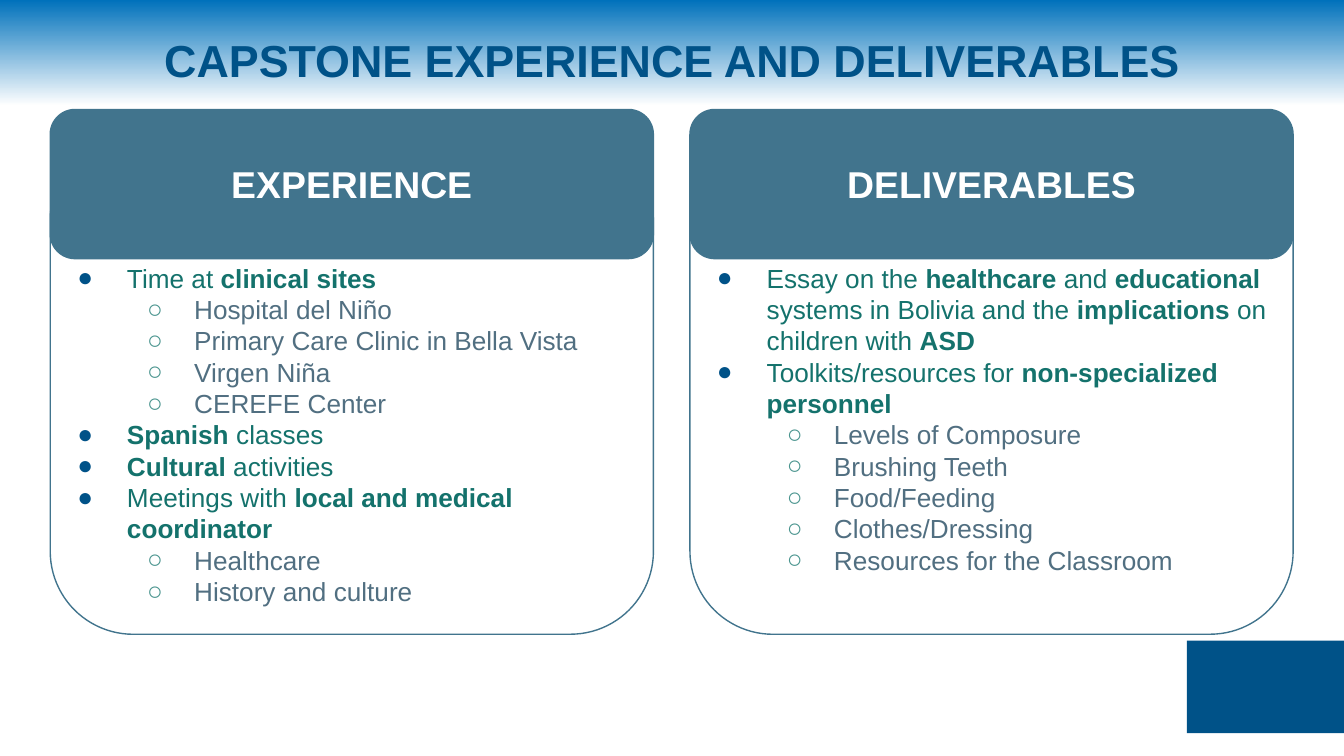
from lxml.etree import SubElement
from pptx import Presentation
from pptx.dml.color import RGBColor
from pptx.enum.shapes import MSO_SHAPE
from pptx.enum.text import MSO_ANCHOR, MSO_AUTO_SIZE, PP_ALIGN
from pptx.oxml.ns import qn
from pptx.util import Cm, Pt

FONT = "Arial"
NAVY, STEEL, WHITE = "005288", "41748D", "FFFFFF"

# Per list level: left margin, hanging indent (cm), bullet, bullet colour, text colour
LEVELS = [
    (1.27, -0.94, "●", NAVY, "14726C"),
    (2.54, -0.89, "○", "49948E", "516F81"),
]

# List items are (level, text); ** switches bold on and off
EXPERIENCE = [
    (0, "Time at **clinical sites**"),
    (1, "Hospital del Niño"),
    (1, "Primary Care Clinic in Bella Vista"),
    (1, "Virgen Niña"),
    (1, "CEREFE Center"),
    (0, "**Spanish** classes"),
    (0, "**Cultural** activities"),
    (0, "Meetings with **local and medical coordinator**"),
    (1, "Healthcare"),
    (1, "History and culture"),
]
DELIVERABLES = [
    (0, "Essay on the **healthcare **and** educational **systems in Bolivia "
        "and the **implications** on children with **ASD**"),
    (0, "Toolkits/resources for **non-specialized personnel**"),
    (1, "Levels of Composure"),
    (1, "Brushing Teeth"),
    (1, "Food/Feeding"),
    (1, "Clothes/Dressing"),
    (1, "Resources for the Classroom"),
]


def color(hex_string):
    return RGBColor.from_string(hex_string)


def place(shape, box):
    shape.left, shape.top, shape.width, shape.height = (Cm(value) for value in box)


def set_frame(text_frame, anchor, side, edge):
    text_frame.word_wrap = True
    text_frame.auto_size = MSO_AUTO_SIZE.NONE
    text_frame.vertical_anchor = anchor
    text_frame.margin_left = text_frame.margin_right = Cm(side)
    text_frame.margin_top = text_frame.margin_bottom = Cm(edge)


def style_run(run, size, hex_string, bold):
    run.font.name = FONT
    run.font.size = Pt(size)
    run.font.bold = bold
    run.font.color.rgb = color(hex_string)


def set_heading(text_frame, text, size, hex_string):
    text_frame.text = text
    paragraph = text_frame.paragraphs[0]
    paragraph.alignment = PP_ALIGN.CENTER
    style_run(paragraph.runs[0], size, hex_string, True)


def add_box(slide, kind, box, fill=None, line=None):
    shape = slide.shapes.add_shape(kind, *(Cm(value) for value in box))
    shape.shadow.inherit = False
    if fill:
        shape.fill.solid()
        shape.fill.fore_color.rgb = color(fill)
    else:
        shape.fill.background()
    if line:
        shape.line.color.rgb = color(line)
        shape.line.width = Pt(0.75)
    else:
        shape.line.fill.background()
    return shape


def set_bullet(paragraph, level):
    margin, indent, character, bullet_color, _ = LEVELS[level]
    properties = paragraph._p.get_or_add_pPr()
    properties.set("marL", str(Cm(margin)))
    properties.set("indent", str(Cm(indent)))
    bullet_fill = SubElement(properties, qn("a:buClr"))
    SubElement(bullet_fill, qn("a:srgbClr"), val=bullet_color)
    SubElement(properties, qn("a:buFont"), typeface=FONT)
    SubElement(properties, qn("a:buChar"), char=character)


def fill_list(placeholder, box, items):
    place(placeholder, box)
    text_frame = placeholder.text_frame
    set_frame(text_frame, MSO_ANCHOR.TOP, 0.18, 0.1)
    for index, (level, text) in enumerate(items):
        paragraph = text_frame.add_paragraph() if index else text_frame.paragraphs[0]
        paragraph.level = level
        set_bullet(paragraph, level)
        paragraph.alignment = PP_ALIGN.LEFT
        paragraph.line_spacing = 1.0
        paragraph.space_before = paragraph.space_after = Pt(0)
        for part, words in enumerate(text.split("**")):
            if words:
                run = paragraph.add_run()
                run.text = words
                style_run(run, 14, LEVELS[level][4], part % 2 == 1)


def set_background(slide):
    fill = slide.background.fill
    fill.gradient()
    fill.gradient_angle = 270
    for stop, (position, hex_string) in zip(
        fill.gradient_stops, [(0, "0071BB"), (0.14, WHITE)]
    ):
        stop.position = position
        stop.color.rgb = color(hex_string)


def fill_title(placeholder, box):
    place(placeholder, box)
    set_frame(placeholder.text_frame, MSO_ANCHOR.MIDDLE, 0.18, 0.1)
    set_heading(placeholder.text_frame, "CAPSTONE EXPERIENCE AND DELIVERABLES", 24, NAVY)


def add_card(slide, box, heading, placeholder, list_size, items):
    left, top, width, height = box
    header_height = 2.82
    # Outline, starting behind the header
    add_box(slide, MSO_SHAPE.ROUNDED_RECTANGLE,
            (left, top + 0.51, width, height - 0.51), line=STEEL)
    # Header
    header = add_box(slide, MSO_SHAPE.ROUNDED_RECTANGLE,
                     (left, top, width, header_height), STEEL, STEEL)
    set_frame(header.text_frame, MSO_ANCHOR.MIDDLE, 0.25, 0.25)
    set_heading(header.text_frame, heading, 20, WHITE)
    # List
    fill_list(placeholder, (left, top + header_height - 0.04, *list_size), items)


def main():
    presentation = Presentation()
    presentation.slide_width, presentation.slide_height = Cm(25.4), Cm(14.29)
    slide = presentation.slides.add_slide(presentation.slide_layouts[3])
    title, left_list, right_list = list(slide.placeholders)[:3]

    set_background(slide)
    # Corner block
    add_box(slide, MSO_SHAPE.RECTANGLE, (22.43, 12.11, 2.97, 1.75), NAVY)
    fill_title(title, (1.27, -0.06, 22.86, 2.39))
    # Cards
    add_card(slide, (0.95, 2.07, 11.4, 9.92), "EXPERIENCE",
             left_list, (10.57, 7.54), EXPERIENCE)
    add_card(slide, (13.04, 2.07, 11.4, 9.92), "DELIVERABLES",
             right_list, (11.4, 7.14), DELIVERABLES)

    presentation.save("out.pptx")


if __name__ == "__main__":
    main()
